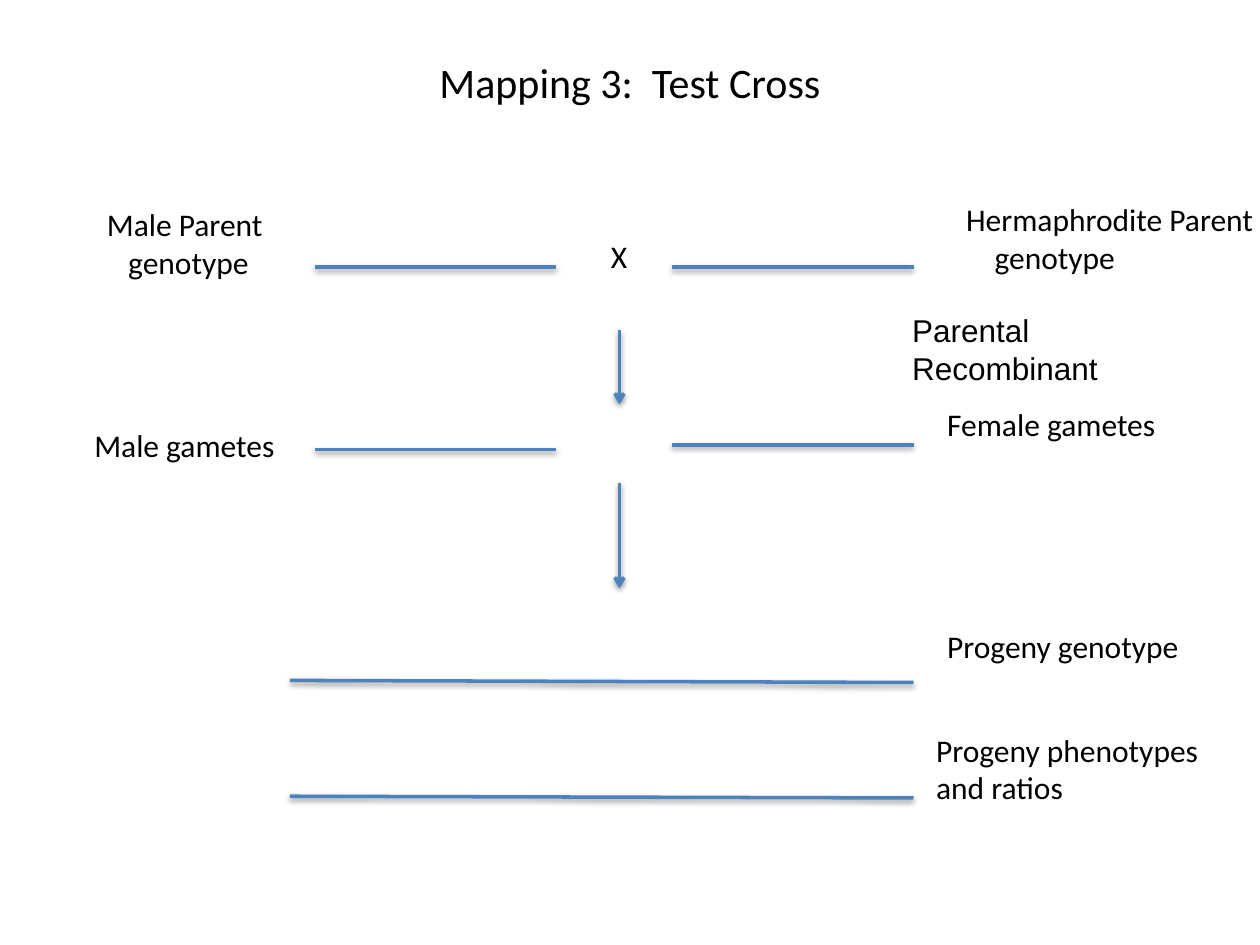
from dataclasses import dataclass

from lxml import etree
from pptx import Presentation
from pptx.dml.color import RGBColor
from pptx.enum.shapes import MSO_CONNECTOR
from pptx.enum.text import MSO_ANCHOR, MSO_AUTO_SIZE, PP_ALIGN
from pptx.oxml.ns import qn
from pptx.util import Pt

STRAIGHT = MSO_CONNECTOR.STRAIGHT
MIDDLE = MSO_ANCHOR.MIDDLE
FIT_SHAPE = MSO_AUTO_SIZE.SHAPE_TO_FIT_TEXT
CENTER = PP_ALIGN.CENTER
TITLE_ONLY = 5


@dataclass(frozen=True)
class Theme:
    ink: RGBColor = RGBColor(0x00, 0x00, 0x00)
    rule: RGBColor = RGBColor(0x4F, 0x81, 0xBD)
    rule_width: float = Pt(2)
    title_size: float = Pt(24)
    label_size: float = Pt(18)
    face: str = "Calibri"
    key_face: str = "Arial"


THEME = Theme()

MALE_LINE = (180, 318)
FEMALE_LINE = (384, 522)
PROGENY_LINE = (165.6, 522)
CROSS_X = 354

LABELS = [
    (545, 110.9, 180, ["Hermaphrodite Parent", "genotype"], 16.3),
    (54, 113.8, 104.4, ["Male Parent", "genotype"], 12.2),
    (342, 131.8, 23.8, ["X"], 0),
    (46.8, 239.8, 118.8, ["Male gametes"], 0),
    (534.2, 228.2, 134.6, ["Female gametes"], 0),
    (534.2, 355, 148.3, ["Progeny genotype"], 0),
    (527.8, 414, 166.3, ["Progeny phenotypes", "and ratios"], 0),
]
RULES = [
    (MALE_LINE, 152.6, 152.6),
    (FEMALE_LINE, 152.6, 152.6),
    (MALE_LINE, 257, 257),
    (FEMALE_LINE, 254.2, 254.2),
    (PROGENY_LINE, 388.8, 390),
    (PROGENY_LINE, 455, 456),
]
ARROWS = [(188.6, 231.1), (275.8, 336.2)]


def apply_format(target, values):
    for attribute, value in values.items():
        setattr(target, attribute, value)


def format_font(paragraph, size, face):
    apply_format(paragraph.font, {"size": size, "name": face})
    paragraph.font.color.rgb = THEME.ink


def set_title(slide, wording):
    title = slide.shapes.title
    apply_format(title, {"left": Pt(36), "top": Pt(21.6),
                         "width": Pt(648), "height": Pt(50.4)})
    title.text_frame.text = wording
    title.text_frame.vertical_anchor = MIDDLE
    heading = title.text_frame.paragraphs[0]
    heading.alignment = CENTER
    format_font(heading, THEME.title_size, THEME.face)


def add_label(slide, left, top, width, lines, indent=0, face=THEME.face):
    height = 7.2 + 22 * len(lines)
    frame = slide.shapes.add_textbox(
        Pt(left), Pt(top), Pt(width), Pt(height)).text_frame
    apply_format(frame, {"text": "\n".join(lines), "word_wrap": False,
                         "auto_size": FIT_SHAPE})
    for paragraph in frame.paragraphs:
        format_font(paragraph, THEME.label_size, face)
    if indent:
        last_line = frame.paragraphs[-1]._p.get_or_add_pPr()
        last_line.set("marL", str(Pt(indent)))


def add_rule(slide, start_x, start_y, end_x, end_y):
    rule = slide.shapes.add_connector(
        STRAIGHT, Pt(start_x), Pt(start_y), Pt(end_x), Pt(end_y))
    rule.line.color.rgb = THEME.rule
    rule.line.width = THEME.rule_width
    return rule


def add_down_arrow(slide, top, bottom):
    arrow = add_rule(slide, CROSS_X, top, CROSS_X, bottom)
    outline = arrow.line._get_or_add_ln()
    etree.SubElement(outline, qn("a:tailEnd"), type="arrow")


def main():
    deck = Presentation()
    apply_format(deck, {"slide_width": Pt(720), "slide_height": Pt(540)})
    slide = deck.slides.add_slide(deck.slide_layouts[TITLE_ONLY])
    set_title(slide, "Mapping 3:  Test Cross")
    for label in LABELS:
        add_label(slide, *label)
    for (left, right), start_y, end_y in RULES:
        add_rule(slide, left, start_y, right, end_y)
    for top, bottom in ARROWS:
        add_down_arrow(slide, top, bottom)
    add_label(slide, 514.1, 174.2, 121.7, ["Parental", "Recombinant"],
              face=THEME.key_face)
    deck.save("out.pptx")


if __name__ == "__main__":
    main()
